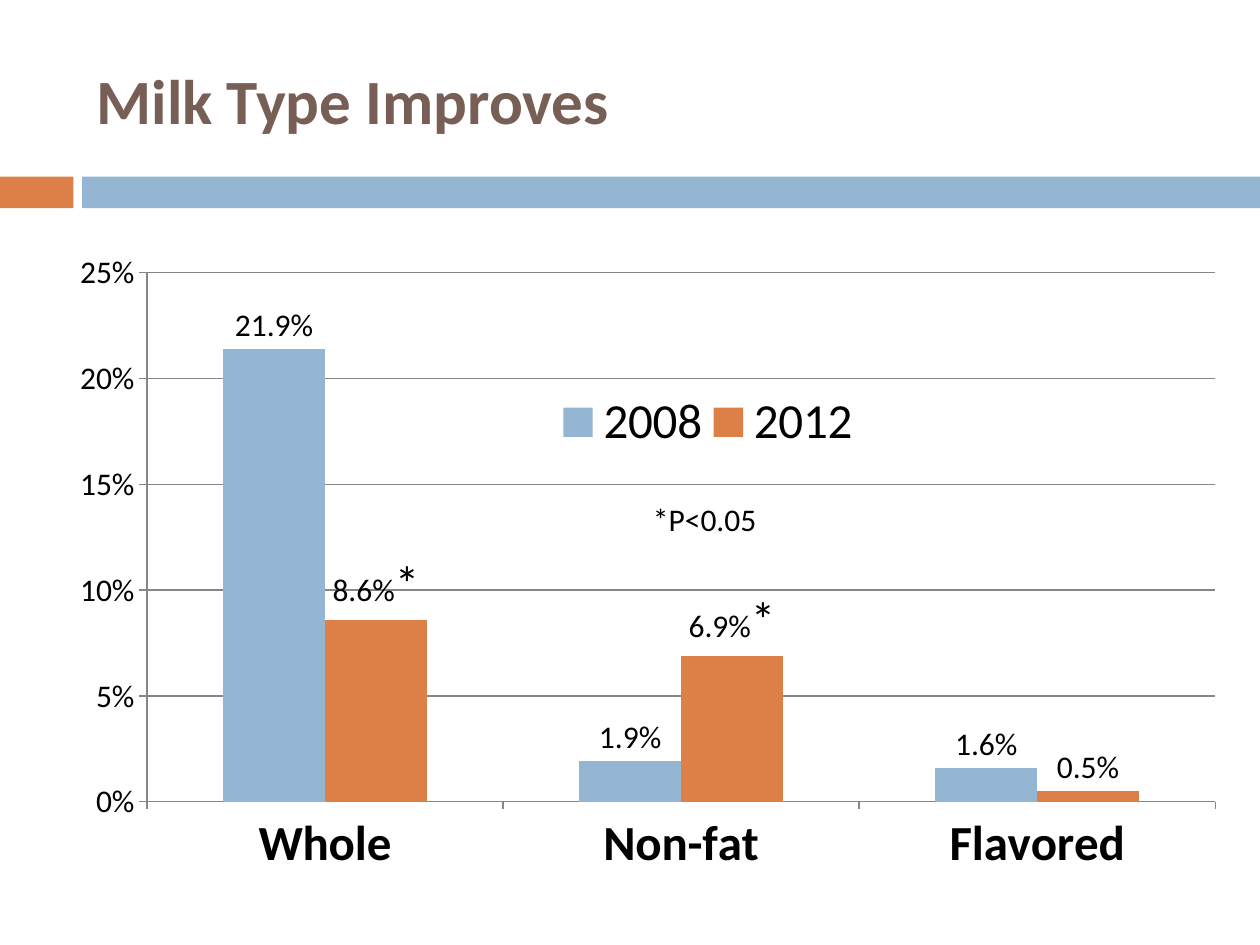
from lxml.etree import SubElement
from pptx import Presentation
from pptx.chart.data import CategoryChartData
from pptx.dml.color import RGBColor
from pptx.enum.chart import XL_CHART_TYPE, XL_LABEL_POSITION, XL_LEGEND_POSITION, XL_TICK_MARK
from pptx.enum.shapes import MSO_SHAPE
from pptx.enum.text import MSO_ANCHOR, MSO_AUTO_SIZE, PP_ALIGN
from pptx.oxml.ns import qn
from pptx.util import Pt

HUES = {"blue": "94B6D2", "rust": "DD8047", "brown": "775F55", "ink": "000000", "rule": "868686"}
FONTS = {
    "title": {"size": Pt(36), "bold": True, "name": "Calibri"},
    "text": {"size": Pt(18), "bold": False, "name": "Calibri"},
    "large": {"size": Pt(28), "bold": False, "name": "Calibri"},
    "group": {"size": Pt(28), "bold": True, "name": "Calibri"},
}
CATS = ["Whole", "Non-fat", "Flavored"]
SERIES = [
    ("2008", "blue", [0.214, 0.019, 0.016], {0: ["21.9%"]}),
    ("2012", "rust", [0.086, 0.069, 0.005], {0: ["8.6%", "*"], 1: ["6.9%", "*"]}),
]


def hue(name):
    """Return the named colour."""
    return RGBColor.from_string(HUES[name])


def style(item, vals):
    """Set each attribute in a dict of values."""
    for key, val in vals.items():
        setattr(item, key, val)


def ink(font, kind, tint="ink"):
    """Format a font by kind and colour."""
    style(font, FONTS[kind])
    font.color.rgb = hue(tint)


def place(item, box):
    """Move an item to a box given in points."""
    style(item, dict(zip(("left", "top", "width", "height"), map(Pt, box))))


def layout(node, spot, box, inner=False):
    """Give a chart part a manual layout in chart fractions."""
    for old in node.findall(qn("c:layout")):
        node.remove(old)
    frame = SubElement(node, qn("c:layout"))
    node.insert(spot, frame)
    hand = SubElement(frame, qn("c:manualLayout"))
    vals = [("layoutTarget", "inner")] if inner else []
    vals += [("xMode", "edge"), ("yMode", "edge"), *zip("xywh", box)]
    for tag, val in vals:
        SubElement(hand, qn(f"c:{tag}")).set("val", str(val))


def add_title(slide, box):
    """Fill the title placeholder."""
    title = slide.shapes.title
    place(title, box)
    frame = title.text_frame
    frame.text = "Milk Type Improves"
    frame.vertical_anchor = MSO_ANCHOR.MIDDLE
    para = frame.paragraphs[0]
    para.alignment = PP_ALIGN.LEFT
    ink(para.runs[0].font, "title", "brown")


def add_band(slide, box):
    """Draw the two-part band across the slide."""
    left, top, width, height = box
    tab, gap = 42, 5
    parts = [("rust", left, tab), ("blue", left + tab + gap, width - tab - gap)]
    for tint, start, span in parts:
        bar = slide.shapes.add_shape(MSO_SHAPE.RECTANGLE, *map(Pt, (start, top, span, height)))
        bar.shadow.inherit = False
        bar.fill.solid()
        bar.fill.fore_color.rgb = hue(tint)
        bar.line.fill.background()


def add_labels(series, notes):
    """Label the bars of one series, with custom text where given."""
    labels = series.data_labels
    style(labels, {"show_value": True, "number_format": "0.0%",
                   "number_format_is_linked": False, "position": XL_LABEL_POSITION.OUTSIDE_END})
    ink(labels.font, "text")
    for spot, words in notes.items():
        label = series.points[spot].data_label
        para = label.text_frame.paragraphs[0]
        for word, kind in zip(words, ("text", "large")):
            run = para.add_run()
            run.text = word
            ink(run.font, kind)
        label.position = XL_LABEL_POSITION.OUTSIDE_END


def add_graph(slide, box):
    """Add the column chart of milk types."""
    data = CategoryChartData(number_format="0.0%")
    data.categories = CATS
    for name, _, vals, _ in SERIES:
        data.add_series(name, vals)
    chart = slide.shapes.add_chart(XL_CHART_TYPE.COLUMN_CLUSTERED, *map(Pt, box), data).chart
    style(chart, {"has_title": False, "has_legend": True})
    ink(chart.font, "text")
    plot = chart.plots[0]
    style(plot, {"gap_width": 150, "overlap": 0, "vary_by_categories": False})
    for series, (_, tint, _, notes) in zip(plot.series, SERIES):
        series.format.fill.solid()
        series.format.fill.fore_color.rgb = hue(tint)
        add_labels(series, notes)
    cat, val = chart.category_axis, chart.value_axis
    style(val, {"minimum_scale": 0, "maximum_scale": 0.25, "major_unit": 0.05,
                "has_major_gridlines": True})
    style(val.tick_labels, {"number_format": "0%", "number_format_is_linked": False})
    for axis, kind in ((cat, "group"), (val, "text")):
        axis.major_tick_mark = XL_TICK_MARK.OUTSIDE
        ink(axis.tick_labels.font, kind)
    for part in (cat, val, val.major_gridlines):
        part.format.line.color.rgb = hue("rule")
        part.format.line.width = Pt(0.75)
    legend = chart.legend
    style(legend, {"position": XL_LEGEND_POSITION.RIGHT, "include_in_layout": False})
    ink(legend.font, "large")
    layout(legend._element, 1, (0.45, 0.22, 0.25, 0.09))
    area = chart._chartSpace.chart.plotArea
    layout(area, 0, (0.126, 0.046, 0.855, 0.775), True)


def add_note(slide, box):
    """Add the significance note."""
    frame = slide.shapes.add_textbox(*map(Pt, box)).text_frame
    style(frame, {"word_wrap": False, "auto_size": MSO_AUTO_SIZE.SHAPE_TO_FIT_TEXT})
    run = frame.paragraphs[0].add_run()
    run.text = "*P<0.05"
    ink(run.font, "text")


def main():
    """Build and save the slide."""
    deck = Presentation()
    style(deck, {"slide_width": Pt(720), "slide_height": Pt(540)})
    slide = deck.slides.add_slide(deck.slide_layouts[5])
    add_band(slide, (0, 101, 720, 18))
    add_title(slide, (48, 18, 642, 78))
    add_graph(slide, (-6, 138, 714, 390))
    add_note(slide, (366, 282, 79, 29))
    deck.save("out.pptx")


if __name__ == "__main__":
    main()
